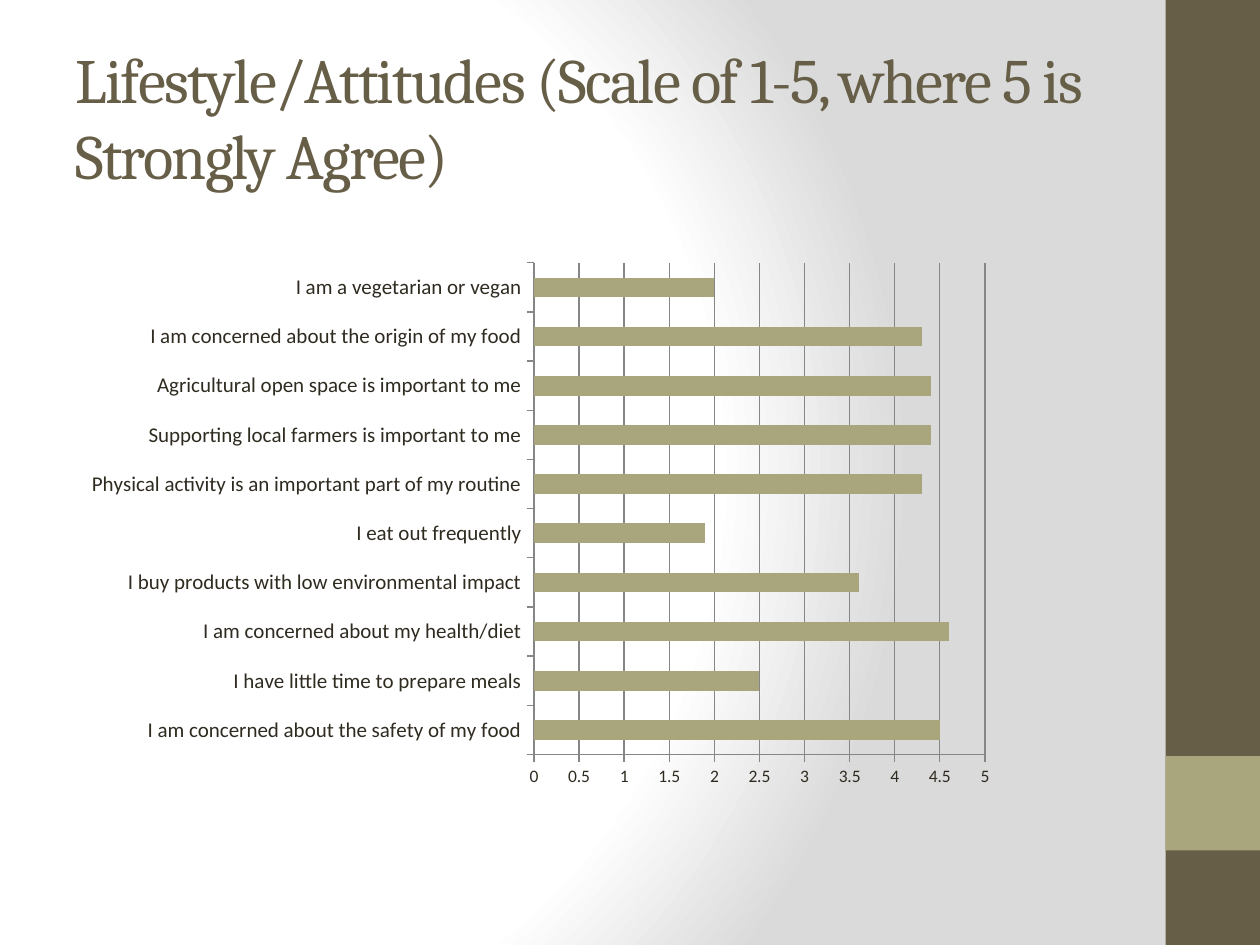
from lxml import etree
from pptx import Presentation
from pptx import util as u
from pptx.chart.data import CategoryChartData
from pptx.dml.color import RGBColor
from pptx.enum import chart as charts, shapes, text
from pptx.oxml import parse_xml
from pptx.oxml.ns import nsdecls, qn

WIDTH, HEIGHT = 10, 7.5
BROWN, OLIVE, INK, GRID = "675E47", "A9A57C", "2F2B20", "868686"
BACKGROUND_STOPS = [(0, "FFFFFF"), (75, "FFFFFF"), (100, "DADADA")]
RATINGS = [
    ("I am concerned about the safety of my food", 4.5),
    ("I have little time to prepare meals", 2.5),
    ("I am concerned about my health/diet", 4.6),
    ("I buy products with low environmental impact", 3.6),
    ("I eat out frequently", 1.9),
    ("Physical activity is an important part of my routine", 4.3),
    ("Supporting local farmers is important to me", 4.4),
    ("Agricultural open space is important to me", 4.4),
    ("I am concerned about the origin of my food", 4.3),
    ("I am a vegetarian or vegan", 2),
]


def color(hex_string):
    return RGBColor.from_string(hex_string)


def inches(box):
    return [u.Inches(length) for length in box]


def style_font(font, name, size, hex_string):
    font.name, font.size = name, u.Pt(size)
    font.color.rgb = color(hex_string)


def add_background(slide):
    """Fill the slide with a circular gradient centred left of the middle."""
    slide.background.fill.solid()
    properties = slide.background._cSld.find(qn("p:bg")).find(qn("p:bgPr"))
    stops = "".join(
        f'<a:gs pos="{share * 1000}"><a:srgbClr val="{value}"/></a:gs>'
        for share, value in BACKGROUND_STOPS)
    gradient = parse_xml(
        f'<a:gradFill {nsdecls("a")} rotWithShape="1"><a:gsLst>{stops}</a:gsLst>'
        '<a:path path="circle"><a:fillToRect l="20000" t="50000" r="100000" b="50000"/>'
        '</a:path></a:gradFill>')
    properties.replace(properties.find(qn("a:solidFill")), gradient)


def add_block(slide, box, fill):
    shape = slide.shapes.add_shape(shapes.MSO_SHAPE.RECTANGLE, *inches(box))
    shape.shadow.inherit = False
    shape.fill.solid()
    shape.fill.fore_color.rgb = color(fill)
    shape.line.fill.background()


def add_sidebar(slide, box):
    left, top, width, height = box
    add_block(slide, box, BROWN)
    add_block(slide, (left, top + 0.8 * height, width, width), OLIVE)


def add_title(slide, box, title):
    frame = slide.shapes.add_textbox(*inches(box)).text_frame
    frame.word_wrap = True
    frame.vertical_anchor = text.MSO_ANCHOR.MIDDLE
    run = frame.paragraphs[0].add_run()
    run.text = title
    style_font(run.font, "Cambria", 36, BROWN)
    run.font._element.set("spc", "-100")


def style_axis(axis, size):
    axis.major_tick_mark = charts.XL_TICK_MARK.OUTSIDE
    axis.minor_tick_mark = charts.XL_TICK_MARK.NONE
    axis.format.line.color.rgb = color(GRID)
    style_font(axis.tick_labels.font, "Calibri", size, INK)


def add_ratings_chart(slide, box):
    data = CategoryChartData()
    data.categories = [statement for statement, _ in RATINGS]
    data.add_series("Series 1", [rating for _, rating in RATINGS])
    chart = slide.shapes.add_chart(
        charts.XL_CHART_TYPE.BAR_CLUSTERED, *inches(box), data).chart
    chart.has_legend = chart.has_title = False
    style_font(chart.font, "Calibri", 10, INK)

    style_axis(chart.category_axis, 12)
    value_axis = chart.value_axis
    style_axis(value_axis, 10)
    value_axis.minimum_scale, value_axis.maximum_scale = 0, 5
    value_axis.major_unit = 0.5
    value_axis.has_major_gridlines = True
    value_axis.major_gridlines.format.line.color.rgb = color(GRID)

    plot = chart.plots[0]
    plot.gap_width = 150
    plot.vary_by_categories = False
    fill = plot.series[0].format.fill
    fill.solid()
    fill.fore_color.rgb = color(OLIVE)


def main():
    presentation = Presentation()
    presentation.slide_width, presentation.slide_height = inches((WIDTH, HEIGHT))
    slide = presentation.slides.add_slide(presentation.slide_layouts[6])
    add_background(slide)
    sidebar = 0.1 * HEIGHT
    add_sidebar(slide, (WIDTH - sidebar, 0, sidebar, HEIGHT))
    add_title(slide, (0.5, 0.3, 8.33, 1.25),
              "Lifestyle/Attitudes (Scale of 1-5, where 5 is Strongly Agree)")
    add_ratings_chart(slide, (0.58, 2, 7.42, 4.33))
    presentation.save("out.pptx")


if __name__ == "__main__":
    main()
